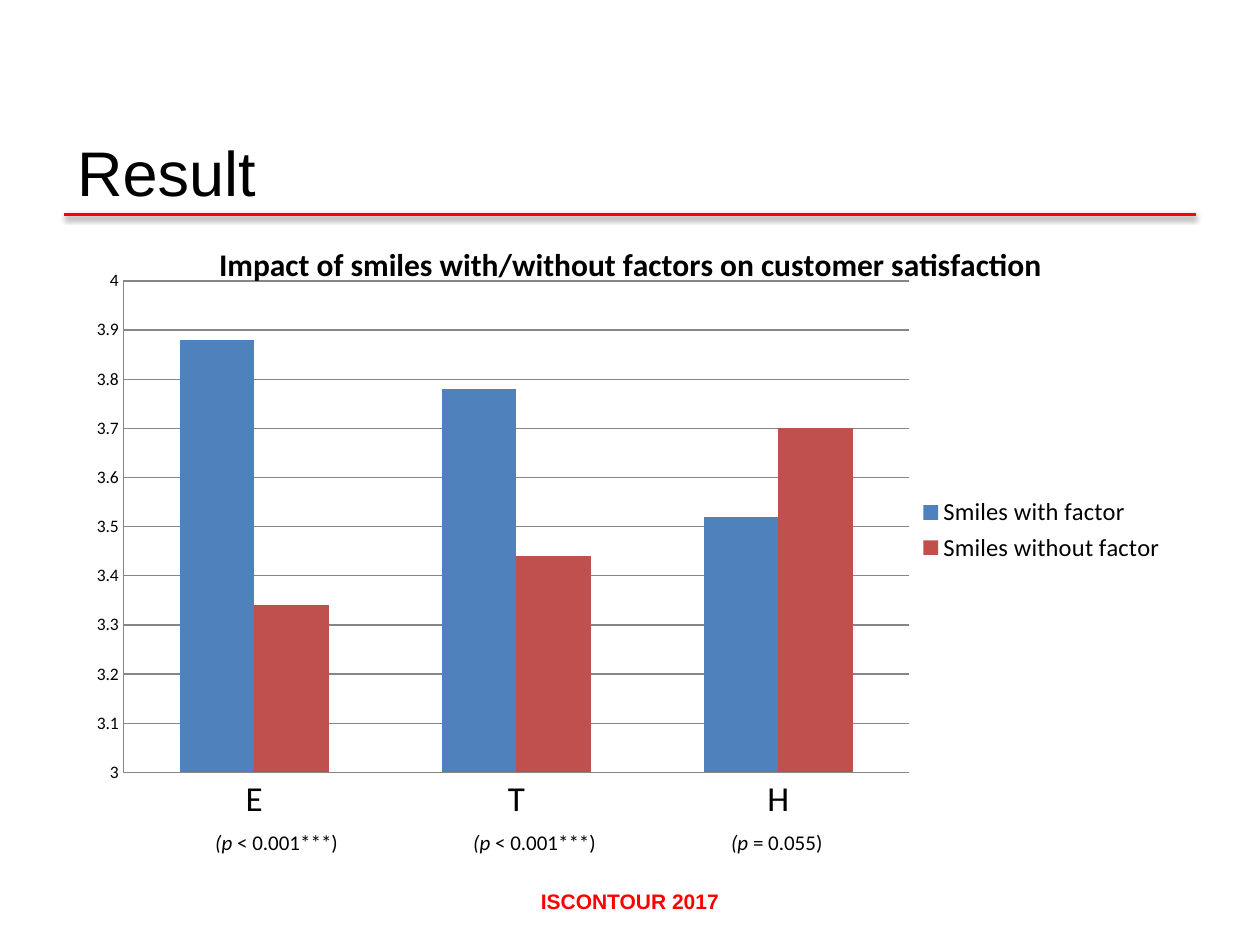
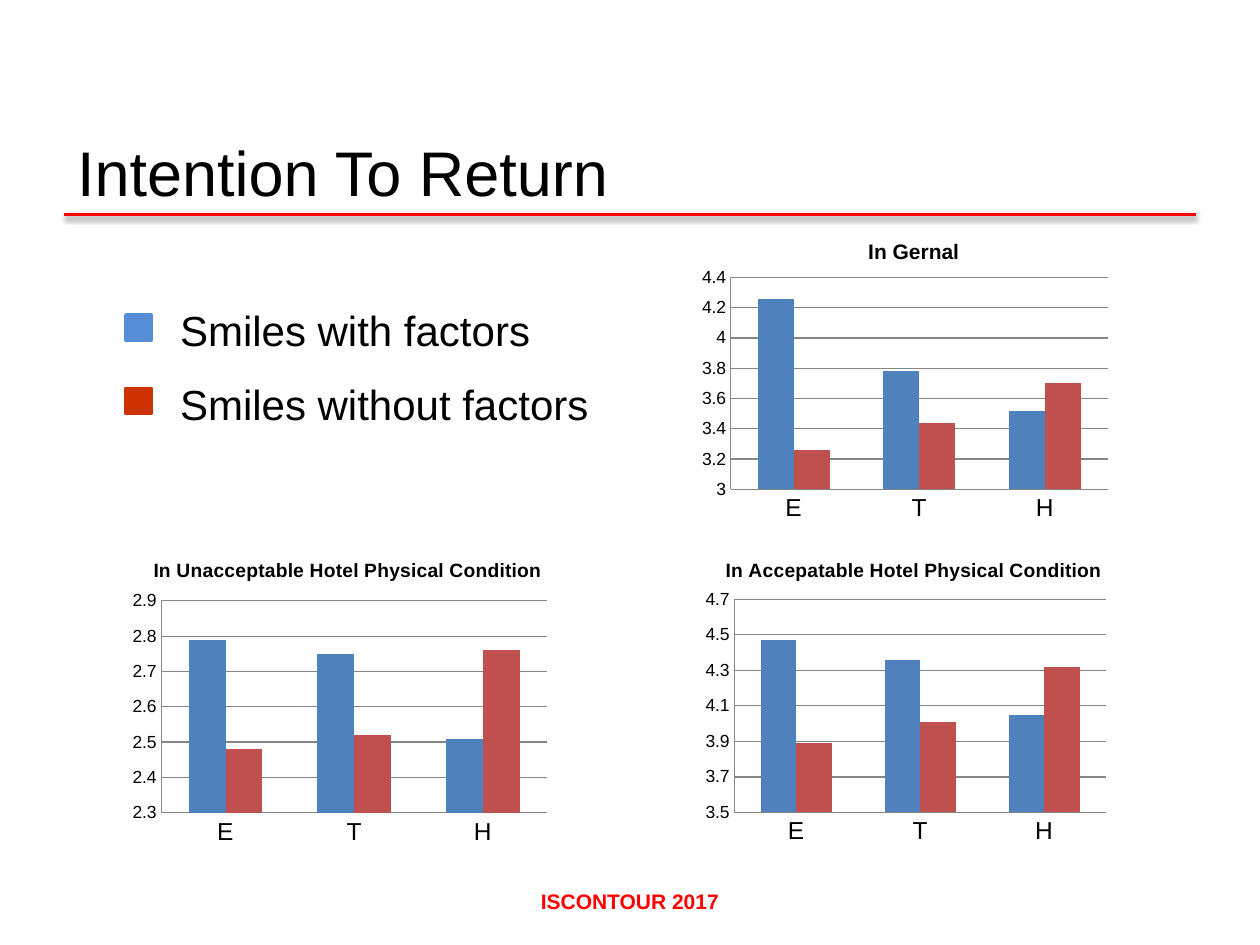
from lxml.etree import SubElement
from pptx import Presentation
from pptx.chart.data import CategoryChartData
from pptx.dml.color import RGBColor
from pptx.enum.chart import XL_CHART_TYPE as ChartType, XL_LEGEND_POSITION as LegendPosition
from pptx.enum.chart import XL_TICK_MARK as TickMark
from pptx.enum.shapes import MSO_CONNECTOR as Connector, MSO_SHAPE as Shape
from pptx.enum.text import MSO_ANCHOR as Anchor, MSO_AUTO_SIZE as AutoSize, PP_ALIGN as Align
from pptx.oxml import parse_xml
from pptx.oxml.ns import nsdecls, qn
from pptx.util import Cm, Pt

BLACK = RGBColor(0x00, 0x00, 0x00)
RED = RGBColor(0xFF, 0x00, 0x00)
GRID_GRAY = RGBColor(0x86, 0x86, 0x86)
BAR_BLUE = RGBColor(0x4F, 0x81, 0xBD)
BAR_RED = RGBColor(0xC0, 0x50, 0x4D)
KEY_BLUE = RGBColor(0x55, 0x8E, 0xD5)
KEY_RED = RGBColor(0xCC, 0x33, 0x00)

FOOTER = "ISCONTOUR 2017"
FACTORS = ("E", "T", "H")

SATISFACTION = dict(
    title="Impact of smiles with/without factors on customer satisfaction",
    names=("Smiles with factor", "Smiles without factor"),
    values=((3.88, 3.78, 3.52), (3.34, 3.44, 3.7)),
    scale=(3, 4, 0.1), plot=(0.038, 0.084, 0.717, 0.821), title_place=(0.12, 0.01),
    title_size=18, category_size=20, font="Calibri", legend=True)
P_VALUES = [(" < 0.001***)", 3.02), (" < 0.001***)", 3.02), (" = 0.055)", 2.39)]

RIGHT, LEFT, UPPER, LOWER = 13.34, 1.93, 4.45, 10.87
RETURN_CHARTS = [
    (RIGHT, UPPER, dict(
        title="In Gernal", title_size=12,
        values=((4.26, 3.78, 3.52), (3.26, 3.44, 3.7)),
        scale=(3, 4.4, 0.2), plot=(0.137, 0.161, 0.748, 0.601))),
    (LEFT, LOWER, dict(
        title="In Unacceptable Hotel Physical Condition",
        values=((2.79, 2.75, 2.51), (2.48, 2.52, 2.76)),
        scale=(2.3, 2.9, 0.1), plot=(0.13, 0.175, 0.766, 0.601))),
    (RIGHT, LOWER, dict(
        title="In Accepatable Hotel Physical Condition",
        values=((4.47, 4.36, 4.05), (3.89, 4.01, 4.32)),
        scale=(3.5, 4.7, 0.2), plot=(0.144, 0.17, 0.738, 0.605))),
]
KEYS = [("Smiles with factors", KEY_BLUE, 7.65), ("Smiles without factors", KEY_RED, 8.84)]


def set_font(font, size, name="Arial", color=BLACK, bold=False, italic=False):
    """Apply one complete character format."""
    font.size, font.name, font.bold, font.italic = Pt(size), name, bold, italic
    font.color.rgb = color


def write(frame, text, italic_lead="", align=Align.LEFT, **style):
    """Fill the first paragraph of a frame, with an optional italic start."""
    para = frame.paragraphs[0]
    para.alignment = align
    for part, italic in ((italic_lead, True), (text, False)):
        if part:
            span = para.add_run()
            span.text = part
            set_font(span.font, italic=italic, **style)


def add_text(page, text, left, top, width, height, wrap=False, **style):
    """Place a text box and write into it."""
    box = page.shapes.add_textbox(Cm(left), Cm(top), Cm(width), Cm(height))
    box.text_frame.word_wrap = wrap
    box.text_frame.auto_size = AutoSize.SHAPE_TO_FIT_TEXT
    write(box.text_frame, text, **style)


def add_page(deck, title):
    """Start a slide with its title, red rule and footer."""
    page = deck.slides.add_slide(deck.slide_layouts[5])
    rule = page.shapes.add_connector(Connector.STRAIGHT, Cm(1.3), Cm(4.32), Cm(24.1), Cm(4.32))
    rule.line.color.rgb, rule.line.width = RED, Pt(2)
    effects = SubElement(rule.element.spPr, qn("a:effectLst"))
    effects.append(parse_xml(
        f'<a:outerShdw {nsdecls("a")} blurRad="40000" dist="20000" dir="5400000" rotWithShape="0">'
        '<a:srgbClr val="000000"><a:alpha val="38000"/></a:srgbClr></a:outerShdw>'))
    add_text(page, FOOTER, 8.1, 17.78, 9.2, 0.76, wrap=True,
             align=Align.CENTER, size=12, color=RED, bold=True)
    heading = page.shapes.title
    heading.left, heading.top, heading.width, heading.height = Cm(1.3), Cm(0.53), Cm(22.8), Cm(3.81)
    heading.text_frame.vertical_anchor = Anchor.BOTTOM
    write(heading.text_frame, title, size=36)
    return page


def fix_layout(part, index, place, inner=False):
    """Pin a chart part at fractions of the chart: x, y and perhaps w, h."""
    for old in part.findall(qn("c:layout")):
        part.remove(old)
    layout = parse_xml(f'<c:layout {nsdecls("c")}><c:manualLayout/></c:layout>')
    target = [("layoutTarget", "inner")] if inner else []
    for tag, value in [*target, ("xMode", "edge"), ("yMode", "edge"), *zip("xywh", place)]:
        SubElement(layout[0], qn("c:" + tag)).set("val", str(value))
    part.insert(index, layout)


def add_columns(page, left, top, width, height, title, values, scale, plot,
                names=("Series 1", "Series 2"), title_place=None, title_size=11,
                category_size=14, font="Arial", legend=False):
    """Draw a clustered column chart of the two kinds of smile."""
    data = CategoryChartData()
    data.categories = FACTORS
    for name, series_values in zip(names, values):
        data.add_series(name, series_values)
    chart = page.shapes.add_chart(ChartType.COLUMN_CLUSTERED, Cm(left), Cm(top),
                                  Cm(width), Cm(height), data).chart
    set_font(chart.font, 10, font)
    chart.has_title = True
    write(chart.chart_title.text_frame, title, align=Align.CENTER,
          size=title_size, name=font, bold=True)
    if title_place:
        fix_layout(chart.element.find(".//" + qn("c:title")), 1, title_place)
    chart.has_legend = legend
    if legend:
        chart.legend.position = LegendPosition.RIGHT
        chart.legend.include_in_layout = False
        set_font(chart.legend.font, 14, font)
    columns = chart.plots[0]
    columns.gap_width, columns.overlap, columns.vary_by_categories = 150, 0, False
    for series, color in zip(columns.series, (BAR_BLUE, BAR_RED)):
        series.format.fill.solid()
        series.format.fill.fore_color.rgb = color
    for axis, size in ((chart.category_axis, category_size), (chart.value_axis, 10)):
        axis.major_tick_mark = axis.minor_tick_mark = TickMark.NONE
        axis.format.line.color.rgb = GRID_GRAY
        set_font(axis.tick_labels.font, size, font)
    axis = chart.value_axis
    axis.minimum_scale, axis.maximum_scale, axis.major_unit = scale
    axis.has_major_gridlines = True
    axis.major_gridlines.format.line.color.rgb = GRID_GRAY
    axis.tick_labels.number_format = "General"
    axis.tick_labels.number_format_is_linked = False
    fix_layout(chart.element.find(".//" + qn("c:plotArea")), 0, plot, inner=True)


def add_result(deck):
    """Build the slide on customer satisfaction."""
    page = add_page(deck, "Result")
    add_columns(page, 1.65, 4.65, 22.1, 12.07, **SATISFACTION)
    for index, (text, width) in enumerate(P_VALUES):
        add_text(page, text, 4.09 + 5.2 * index, 16.59, width, 0.76,
                 italic_lead="(p", size=12, name="Calibri")


def add_intention(deck):
    """Build the slide on the intention to return."""
    page = add_page(deck, "Intention To Return")
    for left, top, content in RETURN_CHARTS:
        add_columns(page, left, top, 10.16, 7.11, **content)
    for index, (text, color, width) in enumerate(KEYS):
        offset = 1.48 * index
        swatch = page.shapes.add_shape(Shape.RECTANGLE, Cm(2.54), Cm(6.35 + offset),
                                       Cm(0.51), Cm(0.51))
        swatch.shadow.inherit = False
        swatch.fill.solid()
        swatch.fill.fore_color.rgb = swatch.line.color.rgb = color
        swatch.line.width = Pt(2)
        add_text(page, text, 3.38, 6.02 + offset, width, 1.27, size=24)


def main():
    """Build and save the deck."""
    deck = Presentation()
    deck.slide_width, deck.slide_height = Cm(25.4), Cm(19.05)
    add_result(deck)
    add_intention(deck)
    deck.save("out.pptx")


if __name__ == "__main__":
    main()
